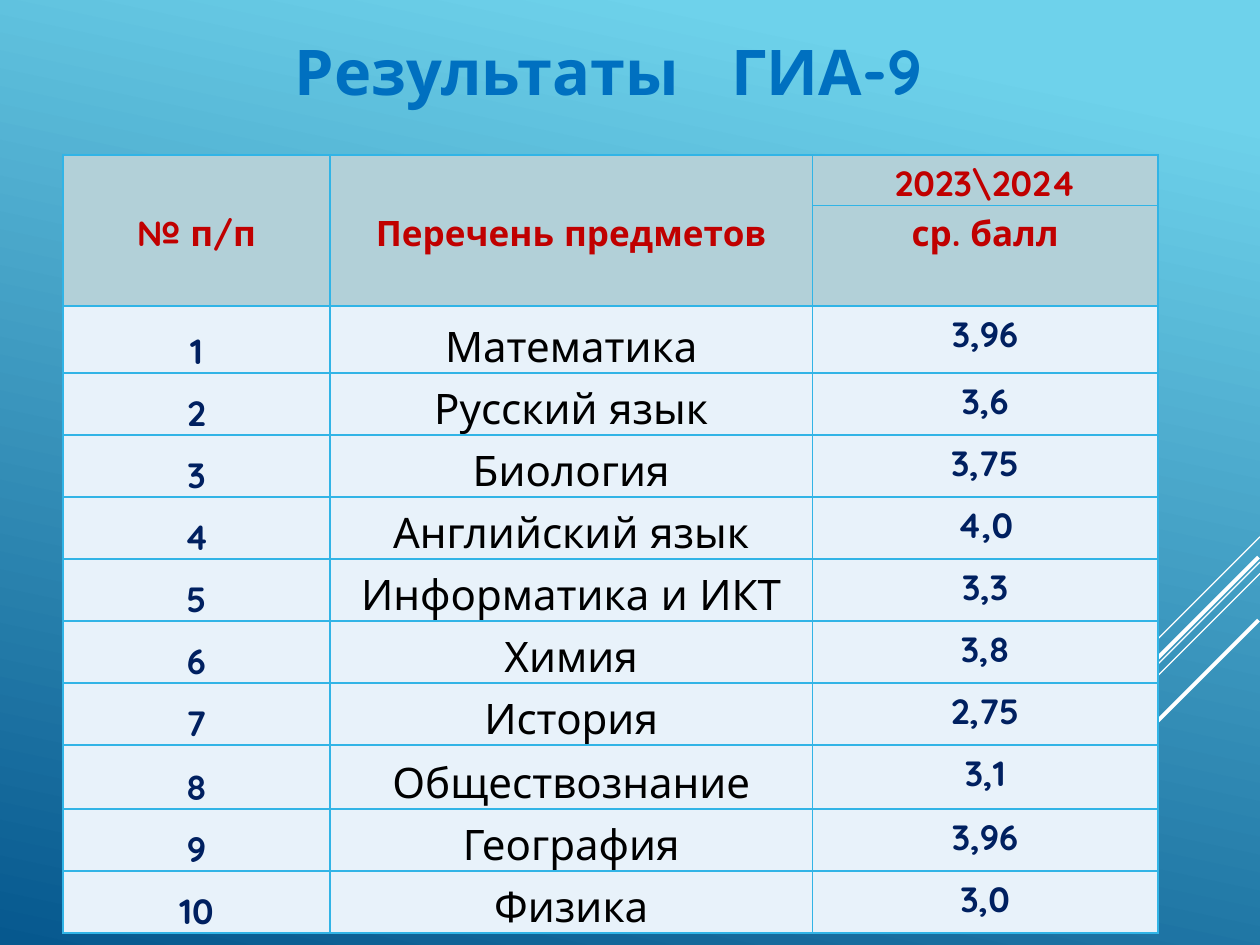
from lxml.etree import SubElement
from pptx import Presentation
from pptx.dml.color import RGBColor
from pptx.enum.shapes import MSO_CONNECTOR as Connector
from pptx.enum.text import MSO_ANCHOR as Anchor, MSO_AUTO_SIZE as AutoSize, PP_ALIGN as Align
from pptx.oxml.ns import qn
from pptx.util import Cm, Pt

FONT = "Quicksand"
HEADER_FILL, BODY_FILL, BORDER = "B2D0D8", "E8F2FA", "31B4E6"
RED, NAVY = "C00000", "002060"
RESULTS = [
    ("Математика", "3,96"),
    ("Русский язык", "3,6"),
    ("Биология", "3,75"),
    ("Английский язык", "4,0"),
    ("Информатика и ИКТ", "3,3"),
    ("Химия", "3,8"),
    ("История", "2,75"),
    ("Обществознание", "3,1"),
    ("География", "3,96"),
    ("Физика", "3,0"),
]
COLUMN_WIDTHS = [5.38, 9.73, 6.96]
ROW_HEIGHTS = [1.02, 2.03, 1.35] + [1.25] * 6 + [1.29, 1.25, 1.25]
STRIPES = [
    (25.4, 10.82, 2.11, 0.75),
    (25.4, 11.33, 6.86, 0.75),
    (25.4, 11.56, 4.37, 0.75),
    (25.37, 11.23, 3.98, 2.25),
    (25.37, 12.5, 2.89, 2.25),
]


def rgb(value):
    return RGBColor.from_string(value)


def write(frame, text, size=20, color=NAVY, bold=True, align=Align.CENTER, spacing=1.15):
    paragraph = frame.paragraphs[0]
    paragraph.alignment = align
    paragraph.line_spacing = spacing
    run = paragraph.add_run()
    run.text = text
    font = run.font
    font.name, font.size, font.bold = FONT, Pt(size), bold
    font.color.rgb = rgb(color)


def paint_background(slide):
    fill = slide.background.fill
    fill.gradient()
    fill.gradient_angle = 258
    for stop, (position, color) in zip(fill.gradient_stops, [(0.1, "6ED2EB"), (1, "06588E")]):
        stop.position = position
        stop.color.rgb = rgb(color)


def add_stripe(slide, right, top, run, width):
    stripe = slide.shapes.add_connector(
        Connector.STRAIGHT, Cm(right), Cm(top), Cm(right - run), Cm(top + run))
    stripe.line.color.rgb = rgb("FFFFFF")
    stripe.line.width = Pt(width)
    SubElement(stripe._element.spPr, qn("a:effectLst"))


def add_title(slide, text):
    title = slide.shapes.title
    title.left, title.top, title.width, title.height = Cm(5.69), Cm(0.53), Cm(13.34), Cm(1.8)
    frame = title.text_frame
    frame.auto_size = AutoSize.NONE
    frame.vertical_anchor = Anchor.TOP
    write(frame, text, size=36, color="0070C0", align=Align.LEFT, spacing=1)


def style_cell(cell, fill, anchor):
    properties = cell._tc.get_or_add_tcPr()
    for side in ("lnL", "lnR", "lnT", "lnB"):
        border = SubElement(properties, qn(f"a:{side}"), w=str(Pt(1)))
        SubElement(SubElement(border, qn("a:solidFill")), qn("a:srgbClr"), val=BORDER)
    cell.fill.solid()
    cell.fill.fore_color.rgb = rgb(fill)
    cell.margin_left = cell.margin_right = cell.margin_top = cell.margin_bottom = 0
    cell.vertical_anchor = anchor


def add_results(slide):
    table = slide.shapes.add_table(
        len(ROW_HEIGHTS), len(COLUMN_WIDTHS), Cm(1.27), Cm(3.12),
        Cm(sum(COLUMN_WIDTHS)), Cm(sum(ROW_HEIGHTS))).table
    for column, width in zip(table.columns, COLUMN_WIDTHS):
        column.width = Cm(width)
    for row, height in zip(table.rows, ROW_HEIGHTS):
        row.height = Cm(height)

    headings = [("№ п/п", "Перечень предметов", "2023\\2024"), (None, None, "ср. балл")]
    for row, labels in enumerate(headings):
        for column, label in enumerate(labels):
            cell = table.cell(row, column)
            style_cell(cell, HEADER_FILL, Anchor.TOP if column == 2 else Anchor.MIDDLE)
            if label:
                write(cell.text_frame, label, color=RED)
    for column in (0, 1):
        table.cell(0, column).merge(table.cell(1, column))

    subject_format = {"size": 24, "color": "000000", "bold": False}
    for number, (subject, score) in enumerate(RESULTS, 1):
        entries = [
            (str(number), Anchor.BOTTOM, {}),
            (subject, Anchor.BOTTOM, subject_format),
            (score, Anchor.TOP, {}),
        ]
        for column, (text, anchor, text_format) in enumerate(entries):
            cell = table.cell(number + 1, column)
            style_cell(cell, BODY_FILL, anchor)
            write(cell.text_frame, text, **text_format)


def main():
    deck = Presentation()
    deck.slide_width, deck.slide_height = Cm(25.4), Cm(19.05)
    slide = deck.slides.add_slide(deck.slide_layouts[5])
    paint_background(slide)
    for stripe in STRIPES:
        add_stripe(slide, *stripe)
    add_results(slide)
    add_title(slide, "Результаты   ГИА-9")
    deck.save("out.pptx")


if __name__ == "__main__":
    main()
